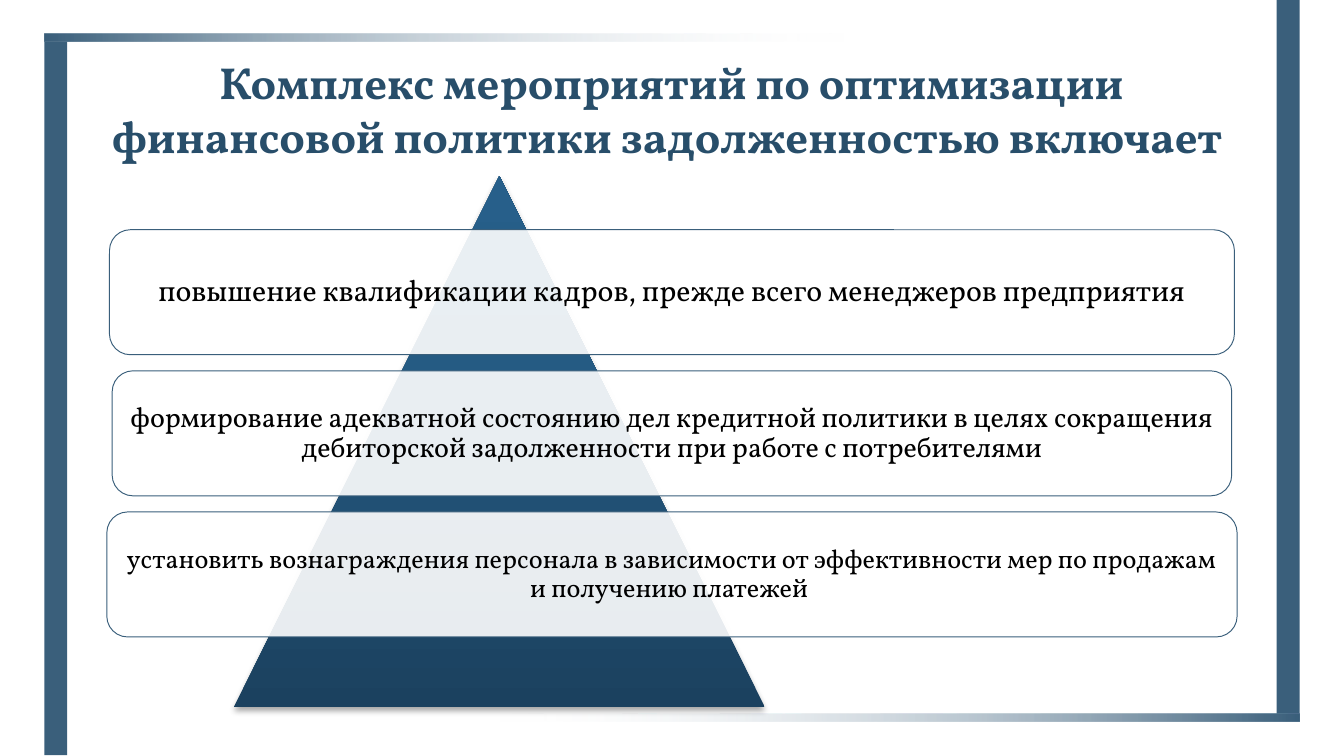
from lxml import etree
from pptx import Presentation
from pptx import util as u
from pptx.dml import color
from pptx.enum import shapes, text
from pptx.oxml import ns

FONT = "Vollkorn"
FRAME = "3A5F7B"
FADE = [(0, FRAME, 100), (65, "FFFFFF", 0), (100, "FFFFFF", 0)]
DEEP = [(0, "1B415F", 100), (65, "255B83", 100), (100, "275F8A", 100)]
TITLE = "Комплекс мероприятий по оптимизации финансовой политики задолженностью включает "
STEPS = [
    ("повышение квалификации кадров, прежде всего менеджеров предприятия",
     16, 8.37, 0.07),
    ("формирование адекватной состоянию дел кредитной политики в целях "
     "сокращения дебиторской задолженности при работе с потребителями",
     15, 8.33, 0.06),
    ("установить вознаграждения персонала в зависимости от эффективности "
     "мер по продажам и получению платежей ", 14, 8.41, 0.06),
]


def rgb(code):
    """Turn a hex string into a colour."""
    return color.RGBColor.from_string(code)


def sub(node, tag, **attrs):
    """Append a DrawingML child with the given attributes."""
    pairs = {key: str(val) for key, val in attrs.items()}
    return etree.SubElement(node, ns.qn("a:" + tag), pairs)


def tint(node, code, alpha):
    """Append a colour with an opacity in percent."""
    sub(sub(node, "srgbClr", val=code), "alpha", val=alpha * 1000)


def shape(slide, kind, box):
    """Add a preset shape without line or shadow."""
    item = slide.shapes.add_shape(kind, *map(u.Inches, box))
    item.shadow.inherit = False
    item.line.fill.background()
    return item


def blend(item, stops, angle):
    """Fill a shape with a linear gradient."""
    item.fill.gradient()
    item.fill.gradient_angle = angle
    group = item._element.spPr.find(".//" + ns.qn("a:gsLst"))
    for old in list(group):
        group.remove(old)
    for pos, code, alpha in stops:
        tint(sub(group, "gs", pos=pos * 1000), code, alpha)


def frame(slide, box):
    """Draw side bars and fading rules that run around the box."""
    left, top, wide, high = box
    bar, rule = 0.17, 0.06
    rect = shapes.MSO_SHAPE.RECTANGLE
    for x, y in ((left + wide - bar, 0), (left, top + rule)):
        side = shape(slide, rect, (x, y, bar, 5.31))
        side.fill.solid()
        side.fill.fore_color.rgb = rgb(FRAME)
    for x, y, angle in ((left + bar, top + high - rule, 180), (left, top, 0)):
        edge = shape(slide, rect, (x, y, wide - bar, rule))
        blend(edge, FADE, angle)


def head(slide, box):
    """Place and format the title."""
    title = slide.shapes.title
    title.left, title.top, title.width, title.height = map(u.Inches, box)
    body = title.text_frame
    body.text = TITLE
    body.word_wrap = True
    body.auto_size = text.MSO_AUTO_SIZE.NONE
    body.vertical_anchor = text.MSO_ANCHOR.BOTTOM
    para = body.paragraphs[0]
    para.alignment = text.PP_ALIGN.CENTER
    font = para.font
    font.name, font.size, font.bold = FONT, u.Pt(24), True
    font.color.rgb = rgb("284E6A")


def card(slide, box, words, size, inset):
    """Draw one translucent rounded card with its text."""
    item = shape(slide, shapes.MSO_SHAPE.ROUNDED_RECTANGLE, box)
    item.fill.solid()
    item.fill.fore_color.rgb = rgb("FFFFFF")
    code = item._element.spPr.find(".//" + ns.qn("a:srgbClr"))
    sub(code, "alpha", val=90000)
    item.line.color.rgb = rgb(FRAME)
    item.line.width = u.Pt(0.5)
    body = item.text_frame
    body.text = words
    body.word_wrap = True
    body.vertical_anchor = text.MSO_ANCHOR.MIDDLE
    body.margin_left = body.margin_right = u.Inches(inset)
    body.margin_top = body.margin_bottom = u.Inches(inset)
    para = body.paragraphs[0]
    para.alignment = text.PP_ALIGN.CENTER
    para.line_spacing = 0.9
    para.font.name, para.font.size = FONT, u.Pt(size)
    para.font.color.rgb = rgb("000000")


def pyramid(slide, box):
    """Draw the triangle and the cards stacked over it."""
    left, top, wide, side = box
    peak = shape(slide, shapes.MSO_SHAPE.ISOSCELES_TRIANGLE,
                 (left + 0.94, top, side, side))
    blend(peak, DEEP, 90)
    glow = sub(peak._element.spPr.find(ns.qn("a:effectLst")), "outerShdw",
               blurRad=u.Pt(3.1), dist=u.Pt(2), dir=5400000, rotWithShape=0)
    tint(glow, "000000", 35)
    for i, (words, size, span, inset) in enumerate(STEPS):
        spot = (left + (wide - span) / 2, top + 0.4 + 1.05 * i, span, 0.93)
        card(slide, spot, words, size, inset)


def main():
    """Build and save the slide."""
    deck = Presentation()
    deck.slide_width = u.Inches(10)
    deck.slide_height = u.Inches(10 * 9 / 16)
    slide = deck.slides.add_slide(deck.slide_layouts[5])
    frame(slide, (0.33, 0.25, 9.34, 5.12))
    head(slide, (0.58, 0.38, 8.83, 0.88))
    pyramid(slide, (0.8, 1.31, 8.4, 3.95))
    deck.save("out.pptx")


if __name__ == "__main__":
    main()
